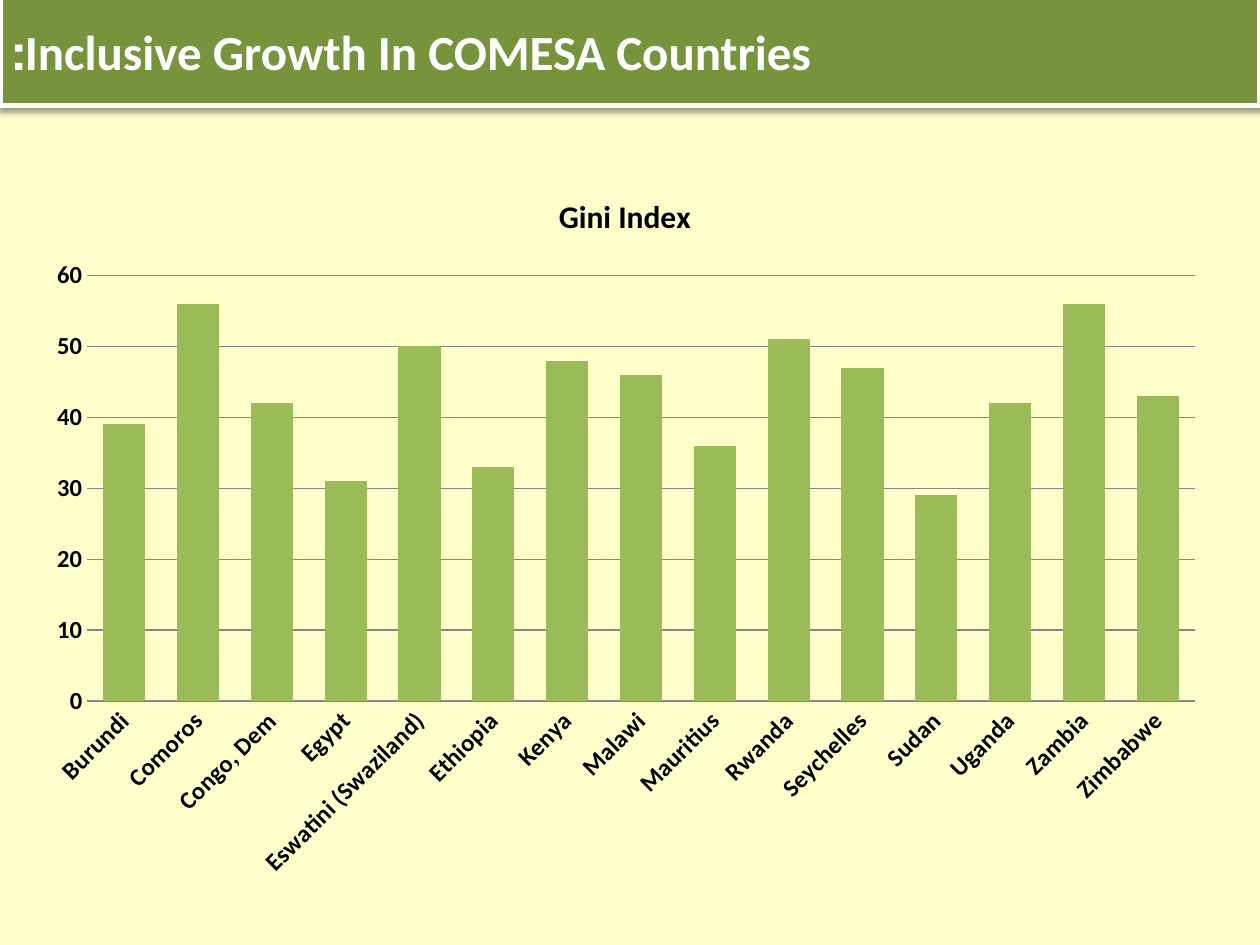
from lxml.etree import SubElement
from pptx import Presentation
from pptx.chart.data import CategoryChartData
from pptx.dml.color import RGBColor
from pptx.enum.chart import XL_CHART_TYPE as ChartType, XL_TICK_MARK as TickMark
from pptx.enum.text import MSO_ANCHOR as Anchor, PP_ALIGN as Align
from pptx.oxml.ns import qn
from pptx.util import Inches, Pt

GINI_INDEX = {
    "Burundi": 39, "Comoros": 56, "Congo, Dem": 42, "Egypt": 31,
    "Eswatini (Swaziland)": 50, "Ethiopia": 33, "Kenya": 48, "Malawi": 46,
    "Mauritius": 36, "Rwanda": 51, "Seychelles": 47, "Sudan": 29,
    "Uganda": 42, "Zambia": 56, "Zimbabwe": 43,
}


def rgb(value):
    return RGBColor.from_string(value)


def style_font(font, size, color, name="Calibri", bold=True):
    font.name, font.size, font.bold = name, Pt(size), bold
    font.color.rgb = rgb(color)


def write_text(frame, text, size=14, color="000000", align=None, rtl=False):
    frame.text = text
    paragraph = frame.paragraphs[0]
    paragraph.alignment = align
    if rtl:
        paragraph._p.get_or_add_pPr().set("rtl", "1")
    style_font(paragraph.runs[0].font, size, color)


class SlideBuilder:
    background, banner, bars = "FFFFCC", "77933C", "9BBB59"
    white, black, grid = "FFFFFF", "000000", "868686"

    def __init__(self, deck):
        self.slide = deck.slides.add_slide(deck.slide_layouts[5])
        fill = self.slide.background.fill
        fill.solid()
        fill.fore_color.rgb = rgb(self.background)

    def place(self, shape, left, top, width, height):
        shape.left, shape.top = Inches(left), Inches(top)
        shape.width, shape.height = Inches(width), Inches(height)

    def add_title(self, text, box):
        heading = self.slide.shapes.title
        self.place(heading, *box)
        heading.fill.solid()
        heading.fill.fore_color.rgb = rgb(self.banner)
        heading.line.color.rgb = rgb(self.white)
        heading.line.width = Pt(3)
        heading.text_frame.vertical_anchor = Anchor.MIDDLE
        write_text(heading.text_frame, text, size=28, color=self.white,
                   align=Align.LEFT, rtl=True)
        self.add_shadow(heading)

    def add_shadow(self, shape):
        effects = SubElement(shape._element.spPr, qn("a:effectLst"))
        shadow = SubElement(effects, qn("a:outerShdw"), blurRad=str(Pt(3.1)),
                            dist=str(Pt(1.6)), dir="5400000", rotWithShape="0")
        color = SubElement(shadow, qn("a:srgbClr"), val=self.black)
        SubElement(color, qn("a:alpha"), val="38000")

    def add_column_chart(self, title, values, box):
        data = CategoryChartData()
        data.categories = list(values)
        data.add_series("Series 1", list(values.values()))
        chart = self.slide.shapes.add_chart(
            ChartType.COLUMN_CLUSTERED, *map(Inches, box), data).chart
        style_font(chart.font, 14, self.black)
        chart.has_legend = False
        chart.has_title = True
        write_text(chart.chart_title.text_frame, title, size=18)
        chart.chart_title.include_in_layout = False

        # Columns
        plot = chart.plots[0]
        plot.gap_width, plot.overlap, plot.vary_by_categories = 75, -25, False
        columns = plot.series[0].format.fill
        columns.solid()
        columns.fore_color.rgb = rgb(self.bars)

        # Axes
        countries, scale = chart.category_axis, chart.value_axis
        for axis in (countries, scale):
            axis.major_tick_mark = axis.minor_tick_mark = TickMark.NONE
            style_font(axis.tick_labels.font, 14, self.black)
        countries.format.line.color.rgb = rgb(self.grid)
        countries._element.txPr.find(qn("a:bodyPr")).set("rot", "-2700000")
        scale.minimum_scale, scale.maximum_scale, scale.major_unit = 0, 60, 10
        scale.format.line.fill.background()
        scale.has_major_gridlines = True
        scale.major_gridlines.format.line.color.rgb = rgb(self.grid)
        scale.major_gridlines.format.line.width = Pt(0.75)


def main():
    deck = Presentation()
    deck.slide_width, deck.slide_height = Inches(10), Inches(7.5)
    builder = SlideBuilder(deck)
    # Banner
    builder.add_title("Inclusive Growth In COMESA Countries:", (0, -0.03, 10, 0.87))
    # Inequality by country
    builder.add_column_chart("Gini Index", GINI_INDEX, (0.25, 1.33, 9.42, 5.75))
    deck.save("out.pptx")


if __name__ == "__main__":
    main()
